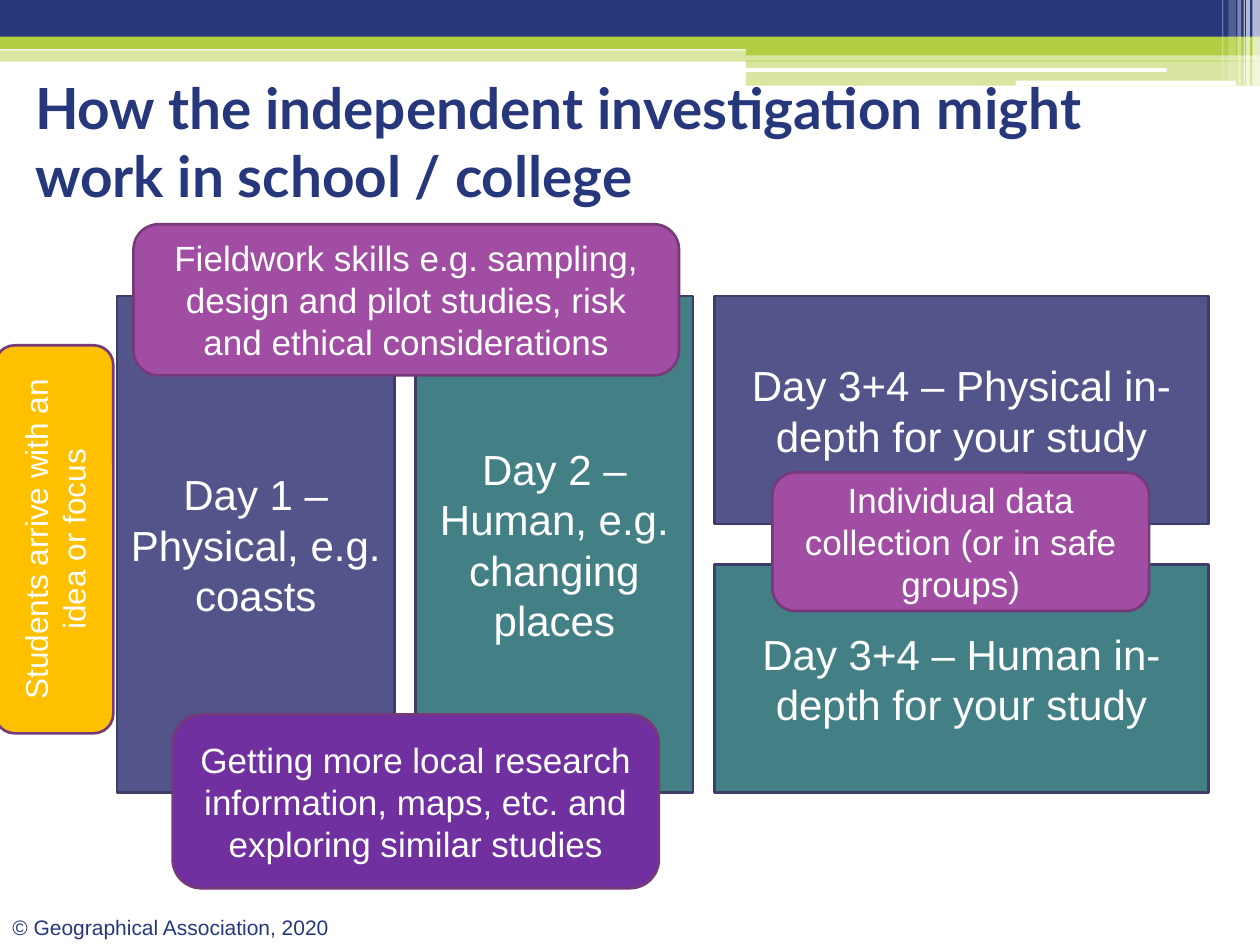
from dataclasses import dataclass

from lxml import etree
from pptx import Presentation
from pptx import util as u
from pptx.dml.color import RGBColor
from pptx.enum import shapes, text
from pptx.oxml.ns import qn

COLORS = {
    "navy": "26377C", "lime": "B4CE44", "white": "FFFFFF",
    "physical": "53548A", "human": "438086", "day_edge": "3D3E66",
    "skills": "A04DA3", "research": "7030A0", "focus": "FFC000",
    "note_edge": "763979",
}
RECT = shapes.MSO_SHAPE.RECTANGLE
ROUND = shapes.MSO_SHAPE.ROUNDED_RECTANGLE
CENTER = text.PP_ALIGN.CENTER
COLUMNS, ROWS = 100, 75  # the slide's grid of square cells


@dataclass
class Box:
    """An area of the slide, in grid columns and rows."""
    x: float
    y: float
    w: float
    h: float

    def inner(self, x, y, w, h):
        return Box(self.x + x, self.y + y, w, h)

    def emu(self):
        return [u.Inches(v / 10) for v in (self.x, self.y, self.w, self.h)]


def rgb(name):
    return RGBColor.from_string(COLORS[name])


def write(sp, words, size, color, font="Arial", bold=False, align=None):
    tf = sp.text_frame
    tf.text = words
    p = tf.paragraphs[0]
    p.alignment = align
    f = p.runs[0].font
    f.name, f.size, f.bold = font, u.Pt(size), bold
    f.color.rgb = rgb(color)
    return tf


def add_block(s, kind, box, fill, alpha=100, edge=None):
    sp = s.shapes.add_shape(kind, *box.emu())
    sp.shadow.inherit = False
    sp.fill.solid()
    sp.fill.fore_color.rgb = rgb(fill)
    if alpha < 100:
        clr = sp.element.spPr.find(qn("a:solidFill")).find(qn("a:srgbClr"))
        etree.SubElement(clr, qn("a:alpha"), val=str(alpha * 1000))
    if edge:
        sp.line.color.rgb = rgb(edge)
        sp.line.width = u.Pt(1.5)
    else:
        sp.line.fill.background()
    return sp


def add_header(s, box):
    right = 0.592 * box.w
    for place, fill, alpha in [
        ((0, 4, box.w, 0.9), "lime", 50),
        ((0, 0, box.w, 3.4), "navy", 100),
        ((0, 2.9, box.w, 1), "lime", 100),
        ((right, 3.4, box.w - right, 1), "lime", 100),
        ((right, 4.8, box.w - right, 2), "lime", 50),
    ]:
        add_block(s, RECT, box.inner(*place), fill, alpha)
    for place in [(59.1, 5.4, 33.5, 0.3), (80.6, 6.4, 17.5, 0.4)]:
        add_block(s, ROUND, box.inner(*place), "white")
    for x, w, h, alpha in [
        (99.4, 0.6, 6.8, 65), (98.9, 0.3, 6.8, 65), (98.7, 0.1, 6.8, 60),
        (98.2, 0.3, 6.8, 40), (97.5, 0.6, 6.4, 20), (97, 0.1, 6.4, 30),
    ]:
        add_block(s, RECT, box.inner(x, 0, w, h), "white", alpha)


def add_title(s, box):
    sp = s.shapes.add_textbox(*box.emu())
    tf = write(sp, "How the independent investigation might work in school / college",
               32.4, "navy", "Lato", True)
    tf.word_wrap = True
    tf.vertical_anchor = text.MSO_ANCHOR.MIDDLE


def add_footer(s, box):
    sp = s.shapes.add_textbox(*box.emu())
    tf = write(sp, "© Geographical Association, 2020", 12, "navy")
    tf.word_wrap = True
    tf.auto_size = text.MSO_AUTO_SIZE.SHAPE_TO_FIT_TEXT


def add_days(s, box):
    """Two tall day blocks, then a wide column split into two options."""
    day_w, gap, split = 22, 1.7, 3.2
    step = day_w + gap
    wide, half = box.w - 2 * step, (box.h - split) / 2
    for x, y, w, h, fill, words in [
        (0, 0, day_w, box.h, "physical", "Day 1 – Physical, e.g. coasts"),
        (step, 0, day_w, box.h, "human", "Day 2 –Human, e.g. changing places"),
        (2 * step, 0, wide, half, "physical",
         "Day 3+4 – Physical in-depth for your study"),
        (2 * step, half + split, wide, half, "human",
         "Day 3+4 – Human in-depth for your study"),
    ]:
        sp = add_block(s, RECT, box.inner(x, y, w, h), fill, edge="day_edge")
        write(sp, words, 24, "white", align=CENTER)


def add_notes(s, box):
    """Rounded labels that overlap the edges of the day blocks."""
    for place, fill, size, turn, words in [
        ((1.3, -5.7, 43.3, 12), "skills", 20, 0,
         "Fieldwork skills e.g. sampling, design and pilot studies, "
         "risk and ethical considerations"),
        ((52, 14, 29.9, 11), "skills", 20, 0,
         "Individual data collection (or in safe groups)"),
        ((4.4, 33.2, 38.6, 13.8), "research", 20, 0,
         "Getting more local research information, maps, etc. "
         "and exploring similar studies"),
        ((-20.4, 14.6, 30.8, 9.4), "focus", 18, 270,
         "Students arrive with an idea or focus"),
    ]:
        sp = add_block(s, ROUND, box.inner(*place), fill, edge="note_edge")
        sp.rotation = turn
        write(sp, words, size, "white", align=CENTER)


def main():
    prs = Presentation()
    prs.slide_width, prs.slide_height = Box(0, 0, COLUMNS, ROWS).emu()[2:]
    s = prs.slides.add_slide(prs.slide_layouts[6])
    board = Box(9.3, 23.5, 86.6, 39.4)
    add_header(s, Box(0, 0, COLUMNS, 6.8))
    add_footer(s, Box(0, 72.1, 28.7, 3))
    add_title(s, Box(1.8, 7.7, 94.1, 6.9))
    add_days(s, board)
    add_notes(s, board)
    prs.save("out.pptx")


if __name__ == "__main__":
    main()
